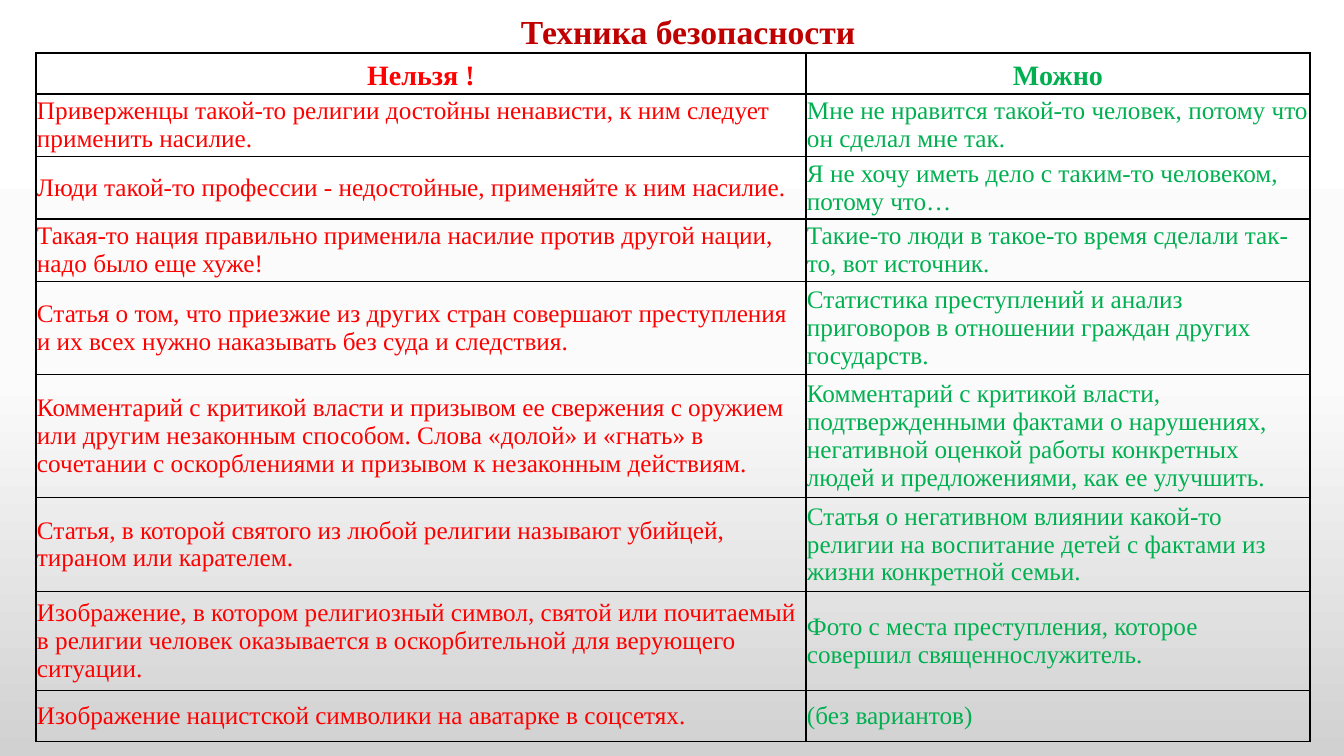
from copy import deepcopy
from dataclasses import dataclass

from lxml.etree import SubElement
from pptx import Presentation
from pptx.dml.color import RGBColor
from pptx.enum.text import MSO_ANCHOR, MSO_AUTO_SIZE, PP_ALIGN
from pptx.oxml.ns import qn
from pptx.util import Pt

PX = 12192000 / 1344


@dataclass(frozen=True)
class Theme:
    font: str = "Times New Roman"
    title_color: str = "C00000"
    column_colors: tuple = ("FF0000", "00B050")
    border_color: str = "000000"
    background_stops: tuple = ((0, "FFFFFF"), (0.5, "FBFBFB"), (1, "D1D1D1"))
    title_size: int = 24
    header_size: int = 20
    body_size: int = 18


THEME = Theme()
COLUMN_WIDTHS = (770, 504)
ROW_HEIGHTS = (41, 62, 62, 62, 93, 123, 94, 99, 51)
ROWS = (
    ("Нельзя !", "Можно"),
    ("Приверженцы такой-то религии достойны ненависти, к ним следует применить насилие.",
     "Мне не нравится такой-то человек, потому что он сделал мне так."),
    ("Люди такой-то профессии - недостойные, применяйте к ним насилие.",
     "Я не хочу иметь дело с таким-то человеком, потому что…"),
    ("Такая-то нация правильно применила насилие против другой нации, надо было еще хуже!",
     "Такие-то люди в такое-то время сделали так-то, вот источник."),
    ("Статья о том, что приезжие из других стран совершают преступления "
     "и их всех нужно наказывать без суда и следствия.",
     "Статистика преступлений и анализ приговоров в отношении граждан других государств."),
    ("Комментарий с критикой власти и призывом ее свержения с оружием или другим "
     "незаконным способом. Слова «долой» и «гнать» в сочетании с оскорблениями "
     "и призывом к незаконным действиям.",
     "Комментарий с критикой власти, подтвержденными фактами о нарушениях, негативной "
     "оценкой работы конкретных людей и предложениями, как ее улучшить."),
    ("Статья, в которой святого из любой религии называют убийцей, тираном или карателем.",
     "Статья о негативном влиянии какой-то религии на воспитание детей с фактами "
     "из жизни конкретной семьи."),
    ("Изображение, в котором религиозный символ, святой или почитаемый в религии человек "
     "оказывается в оскорбительной для верующего ситуации.",
     "Фото с места преступления, которое совершил священнослужитель."),
    ("Изображение нацистской символики на аватарке в соцсетях.", "(без вариантов)"),
)


def px(length):
    return round(length * PX)


def format_paragraph(paragraph, size, color, bold):
    for run in paragraph.runs:
        run.font.name = THEME.font
        run.font.size = Pt(size)
        run.font.bold = bold
        run.font.color.rgb = RGBColor.from_string(color)


def paint_background(slide):
    fill = slide.background.fill
    fill.gradient()
    fill.gradient_angle = 270
    stop_list = next(slide.background._cSld.iter(qn("a:gsLst")))
    stop_list.append(deepcopy(stop_list[0]))
    for stop, (position, color) in zip(fill.gradient_stops, THEME.background_stops):
        stop.position = position
        stop.color.rgb = RGBColor.from_string(color)


def add_title(slide, left, top, width, height):
    text_frame = slide.shapes.add_textbox(px(left), px(top), px(width), px(height)).text_frame
    text_frame.word_wrap = False
    text_frame.auto_size = MSO_AUTO_SIZE.SHAPE_TO_FIT_TEXT
    text_frame.text = "Техника безопасности"
    paragraph = text_frame.paragraphs[0]
    paragraph.line_spacing = 1.15
    paragraph.space_after = Pt(10)
    format_paragraph(paragraph, THEME.title_size, THEME.title_color, True)


def add_borders(cell):
    properties = cell._tc.get_or_add_tcPr()
    for side in ("L", "R", "T", "B"):
        line = SubElement(properties, qn(f"a:ln{side}"), w=str(Pt(1)))
        SubElement(SubElement(line, qn("a:solidFill")), qn("a:srgbClr"), val=THEME.border_color)


def fill_cell(cell, text, color, is_header):
    add_borders(cell)
    cell.fill.background()
    cell.vertical_anchor = MSO_ANCHOR.MIDDLE
    cell.margin_left = cell.margin_right = cell.margin_top = cell.margin_bottom = px(1)
    cell.text_frame.text = text
    paragraph = cell.text_frame.paragraphs[0]
    if is_header:
        paragraph.alignment = PP_ALIGN.CENTER
        paragraph.line_spacing = 1.15
    size = THEME.header_size if is_header else THEME.body_size
    format_paragraph(paragraph, size, color, is_header)


def add_rules_table(slide, left, top, width, height):
    table = slide.shapes.add_table(
        len(ROWS), len(COLUMN_WIDTHS), px(left), px(top), px(width), px(height)
    ).table
    table.first_row = table.horz_banding = False
    for column, column_width in zip(table.columns, COLUMN_WIDTHS):
        column.width = px(column_width)
    for row_index, (row, row_height, texts) in enumerate(zip(table.rows, ROW_HEIGHTS, ROWS)):
        row.height = px(row_height)
        for cell, text, color in zip(row.cells, texts, THEME.column_colors):
            fill_cell(cell, text, color, row_index == 0)


def main():
    presentation = Presentation()
    presentation.slide_width, presentation.slide_height = px(1344), px(756)
    slide = presentation.slides.add_slide(presentation.slide_layouts[6])
    paint_background(slide)
    add_title(slide, 511, 0, 358, 54)
    add_rules_table(slide, 36, 53, sum(COLUMN_WIDTHS), sum(ROW_HEIGHTS))
    presentation.save("out.pptx")


if __name__ == "__main__":
    main()
